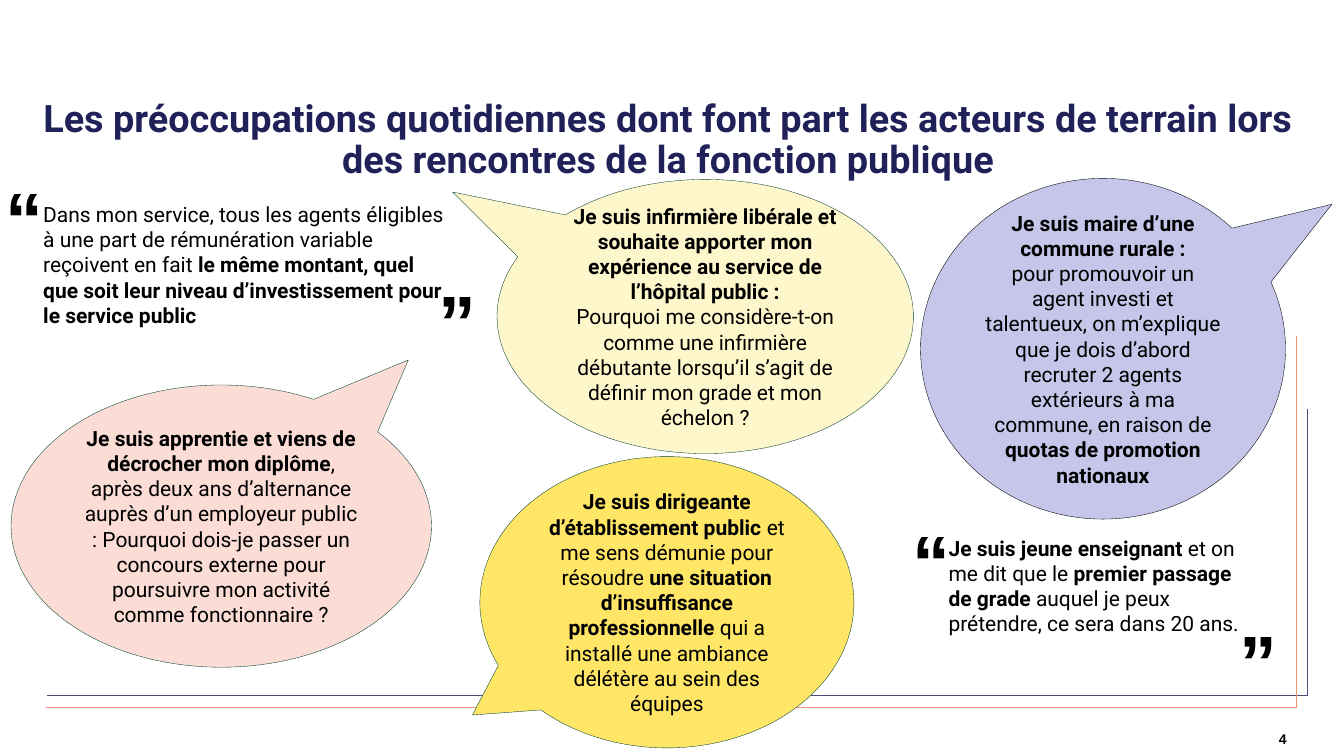
import pptx
import pptx.dml.color
import pptx.enum.shapes
import pptx.enum.text
import pptx.oxml.ns
import pptx.util
from dataclasses import dataclass
from lxml import etree

Inches = pptx.util.Inches
Align = pptx.enum.text.PP_ALIGN
Anchor = pptx.enum.text.MSO_ANCHOR


@dataclass(frozen=True)
class Theme:
    ink: str = "000000"
    title: str = "21215A"
    navy: str = "484D7A"
    coral: str = "F48F70"
    outline: str = "004130"
    pink: str = "FBDDD6"
    cream: str = "FFF7CC"
    lilac: str = "C6C6EA"
    yellow: str = "FFE666"
    body_font: str = "Roboto"
    mark_font: str = "Arial"
    title_size: int = 27
    body_size: int = 15
    mark_size: int = 54
    number_size: int = 10


THEME = Theme()

TITLE = ("Les préoccupations quotidiennes dont font part les acteurs de terrain "
         "lors des rencontres de la fonction publique")
TITLE_AREA = (0.2, 1, 12.85, 0.79)
PAGE_NUMBER = "4"
PAGE_NUMBER_AREA = (10.79, 7.16, 1.97, 0.34)

# Corner of each frame line pair: left end, corner x, corner y, top end
FRAME = [
    (0.47, 12.97, 6.9, 4.06, THEME.navy),
    (0.46, 12.86, 7.02, 3.33, THEME.coral),
]

# Each text is a list of paragraphs; each paragraph is a list of (words, bold)
BUBBLES = [
    dict(area=(0.11, 3.82, 4.17, 2.8), tip=(0.445, -0.589),
         fill=THEME.pink, outline=THEME.outline, text=[
        [("Je suis apprentie et viens de décrocher mon diplôme", True),
         (", après deux ans d’alternance auprès d’un employeur public : Pourquoi "
          "dois-je passer un concours externe pour poursuivre mon activité comme "
          "fonctionnaire ?", False)]]),
    dict(area=(4.93, 1.78, 4.13, 2.72), tip=(-0.607, -0.454),
         fill=THEME.cream, outline=THEME.outline, text=[
        [("Je suis infirmière libérale et souhaite apporter mon expérience au "
          "service de l’hôpital public :", True)],
        [("Pourquoi me considère-t-on comme une infirmière débutante lorsqu’il "
          "s’agit de définir mon grade et mon échelon ?", False)]]),
    dict(area=(9.13, 1.77, 3.62, 3.38), tip=(0.627, -0.424),
         fill=THEME.lilac, outline=THEME.ink, text=[
        [("Je suis maire d’une commune rurale :", True)],
        [("pour promouvoir un agent investi et talentueux, on m’explique que je "
          "dois d’abord recruter 2 agents extérieurs à ma commune, en raison de ", False),
         ("quotas de promotion nationaux", True)]]),
    dict(area=(4.76, 4.53, 3.71, 2.89), tip=(-0.52, 0.387),
         fill=THEME.yellow, outline=THEME.outline, text=[
        [("Je suis dirigeante d’établissement public ", True),
         ("et me sens démunie pour résoudre ", False),
         ("une situation d’insuffisance professionnelle ", True),
         ("qui a installé une ambiance délétère au sein des équipes", False)]]),
]

QUOTES = [
    dict(area=(0.33, 1.95, 4.25, 1.36), opening=(0.05, 1.7), closing=(4.35, 2.72), text=[
        [("Dans mon service, tous les agents éligibles à une part de rémunération "
          "variable reçoivent en fait ", False),
         ("le même montant, quel que soit leur niveau d’investissement pour le "
          "service public", True)]]),
    dict(area=(9.31, 5.26, 3.2, 1.36), opening=(9.05, 5.1), closing=(12.29, 6.09), text=[
        [("Je suis jeune enseignant ", True), ("et on me dit que le ", False),
         ("premier passage de grade ", True),
         ("auquel je peux prétendre, ce sera dans 20 ans.", False)]]),
]
MARK_SIZE = (0.5, 0.9)


def color(code):
    return pptx.dml.color.RGBColor.from_string(code)


def write(shape, text, font=THEME.body_font, size=THEME.body_size, ink=THEME.ink,
          align=Align.LEFT, anchor=Anchor.TOP, spacing=None, inset=None):
    """Fill a shape with paragraphs of (words, bold) spans."""
    frame = shape.text_frame
    frame.word_wrap = True
    frame.auto_size = pptx.enum.text.MSO_AUTO_SIZE.NONE
    frame.vertical_anchor = anchor
    if inset is not None:
        frame.margin_left = frame.margin_right = Inches(inset)
        frame.margin_top = frame.margin_bottom = Inches(inset)
    for index, spans in enumerate(text):
        para = frame.add_paragraph() if index else frame.paragraphs[0]
        para.alignment = align
        if spacing:
            para.line_spacing = spacing
        for words, bold in spans:
            span = para.add_run()
            span.text = words
            span.font.name = font
            span.font.size = pptx.util.Pt(size)
            span.font.bold = bold
            span.font.color.rgb = color(ink)


def add_text(page, area, text, **style):
    write(page.shapes.add_textbox(*map(Inches, area)), text, **style)


def add_line(page, start, end, ink):
    line = page.shapes.add_connector(
        pptx.enum.shapes.MSO_CONNECTOR.STRAIGHT, *map(Inches, start + end))
    line.line.color.rgb = color(ink)
    line.line.width = pptx.util.Pt(1)
    etree.SubElement(line._element.spPr, pptx.oxml.ns.qn("a:effectLst"))


def add_bubble(page, area, tip, fill, outline, text):
    bubble = page.shapes.add_shape(
        pptx.enum.shapes.MSO_SHAPE.OVAL_CALLOUT, *map(Inches, area))
    bubble.shadow.inherit = False
    bubble.adjustments[0], bubble.adjustments[1] = tip
    bubble.fill.solid()
    bubble.fill.fore_color.rgb = color(fill)
    bubble.line.color.rgb = color(outline)
    bubble.line.width = pptx.util.Pt(0.25)
    write(bubble, text, align=Align.CENTER, anchor=Anchor.MIDDLE)


def add_quote(page, area, opening, closing, text):
    add_text(page, area, text)
    for mark, corner in (("“", opening), ("”", closing)):
        add_text(page, corner + MARK_SIZE, [[(mark, True)]],
                 font=THEME.mark_font, size=THEME.mark_size, inset=0)


def main():
    deck = pptx.Presentation()
    deck.slide_width, deck.slide_height = Inches(13.33), Inches(7.5)
    page = deck.slides.add_slide(deck.slide_layouts.get_by_name("Title Only"))

    title = page.shapes.title
    title.left, title.top, title.width, title.height = map(Inches, TITLE_AREA)
    write(title, [[(TITLE, True)]], size=THEME.title_size, ink=THEME.title,
          align=Align.CENTER, anchor=Anchor.MIDDLE, spacing=0.9)

    for left, corner, bottom, top, ink in FRAME:
        add_line(page, (left, bottom), (corner, bottom), ink)
        add_line(page, (corner, bottom), (corner, top), ink)
    add_text(page, PAGE_NUMBER_AREA, [[(PAGE_NUMBER, True)]], font=THEME.mark_font,
             size=THEME.number_size, align=Align.RIGHT, anchor=Anchor.MIDDLE, inset=0)

    for bubble in BUBBLES:
        add_bubble(page, **bubble)
    for quote in QUOTES:
        add_quote(page, **quote)
    deck.save("out.pptx")


if __name__ == "__main__":
    main()
